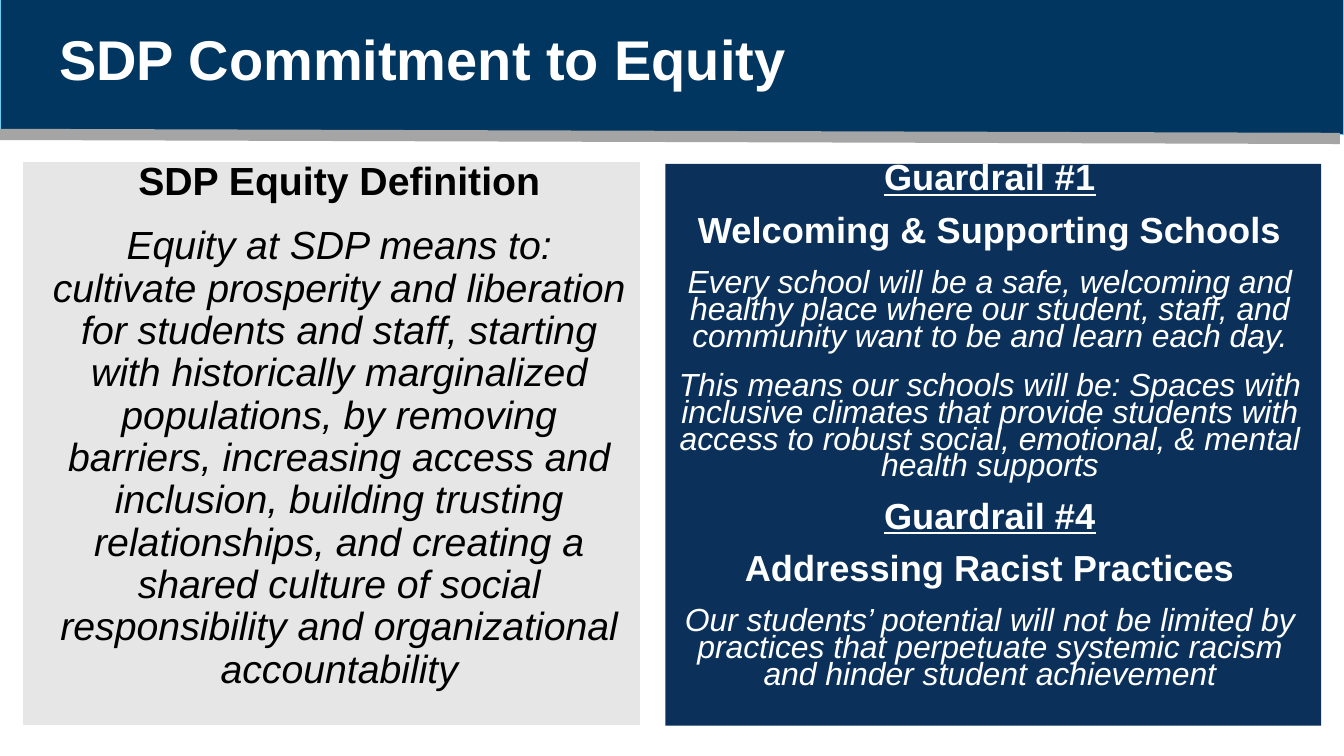
from dataclasses import dataclass
from typing import Optional

import pptx
import pptx.dml.color
import pptx.enum.shapes
import pptx.enum.text
import pptx.oxml.ns
import pptx.util
from lxml import etree

Inches = pptx.util.Inches
Pt = pptx.util.Pt
Align = pptx.enum.text.PP_ALIGN


@dataclass(frozen=True)
class Theme:
    font: str = "Arial"
    white: str = "FFFFFF"
    black: str = "000000"
    band: str = "00365F"
    band_edge: str = "6DCFF6"
    rule: str = "A5A5A5"
    navy: str = "0B315B"
    grey: str = "E6E6E6"
    title: float = 30
    definition: float = 21
    heading: float = 19.4
    detail: float = 17.1


@dataclass(frozen=True)
class Area:
    left: float
    top: float
    width: float
    height: float

    def lengths(self) -> tuple:
        return tuple(map(Inches, (self.left, self.top, self.width, self.height)))


@dataclass(frozen=True)
class Panel:
    area: Area
    fill: str
    edge: Optional[str] = None


@dataclass(frozen=True)
class Guardrail:
    number: str
    name: str
    details: tuple


THEME = Theme()

PANELS = (
    Panel(Area(4.95, 1.22, 4.88, 4.18), THEME.navy),
    Panel(Area(0.18, 1.21, 4.58, 4.18), THEME.grey, THEME.grey),
    Panel(Area(0, -0.05, 10, 1.05), THEME.band, THEME.band_edge),
)

DEFINITION = (
    "Equity at SDP means to: cultivate prosperity and liberation for students and staff, "
    "starting with historically marginalized populations, by removing barriers, increasing "
    "access and inclusion, building trusting relationships, and creating a shared culture of "
    "social responsibility and organizational accountability"
)

GUARDRAILS = (
    Guardrail("Guardrail #1", "Welcoming & Supporting Schools", (
        "Every school will be a safe, welcoming and healthy place where our student, staff, "
        "and community want to be and learn each day.",
        "This means our schools will be: Spaces with inclusive climates that provide students "
        "with access to robust social, emotional, & mental health supports",
    )),
    Guardrail("Guardrail #4", "Addressing Racist Practices", (
        "Our students’ potential will not be limited by practices that perpetuate systemic "
        "racism and hinder student achievement",
    )),
)


def rgb(value: str) -> pptx.dml.color.RGBColor:
    return pptx.dml.color.RGBColor.from_string(value)


def draw_panel(page, panel: Panel) -> None:
    shape = page.shapes.add_shape(
        pptx.enum.shapes.MSO_SHAPE.RECTANGLE, *panel.area.lengths())
    shape.shadow.inherit = False
    shape.fill.solid()
    shape.fill.fore_color.rgb = rgb(panel.fill)
    if panel.edge:
        shape.line.color.rgb = rgb(panel.edge)
        shape.line.width = Pt(0.75)
    else:
        shape.line.fill.background()


def draw_rule(page) -> None:
    rule = page.shapes.add_connector(
        pptx.enum.shapes.MSO_CONNECTOR.STRAIGHT,
        Inches(0), Inches(1), Inches(9.97), Inches(1.03))
    rule.line.color.rgb = rgb(THEME.rule)
    rule.line.width = Pt(6)
    etree.SubElement(rule.element.spPr, pptx.oxml.ns.qn("a:effectLst"))


def prepare_frame(box):
    frame = box.text_frame
    frame.word_wrap = True
    frame.auto_size = pptx.enum.text.MSO_AUTO_SIZE.NONE
    frame.vertical_anchor = pptx.enum.text.MSO_ANCHOR.TOP
    return frame


def add_text(frame, text: str, *, size: float, color: str = THEME.white,
             bold: bool = False, italic: bool = False, underline: bool = False,
             align=Align.CENTER, spacing: float = 0.9) -> None:
    first = not frame.text
    para = frame.paragraphs[0] if first else frame.add_paragraph()
    para.alignment = align
    para.line_spacing = spacing
    para.space_before = Pt(0 if first else 12)
    para.space_after = Pt(0)
    span = para.add_run()
    span.text = text
    span.font.name = THEME.font
    span.font.size = Pt(size)
    span.font.color.rgb = rgb(color)
    span.font.bold = bold
    span.font.italic = italic
    span.font.underline = underline


def draw_title(page) -> None:
    title = page.shapes.title
    title.element.getparent().append(title.element)
    title.left, title.top, title.width, title.height = Area(0.34, 0.19, 9.32, 0.69).lengths()
    add_text(prepare_frame(title), "SDP Commitment to Equity",
             size=THEME.title, bold=True, align=Align.LEFT)


def draw_definition(page) -> None:
    box = page.shapes.add_textbox(*Area(0.29, 1.15, 4.47, 4.18).lengths())
    frame = prepare_frame(box)
    add_text(frame, "SDP Equity Definition",
             size=THEME.definition, color=THEME.black, bold=True)
    add_text(frame, DEFINITION, size=THEME.definition, color=THEME.black, italic=True)


def draw_guardrails(page) -> None:
    box = page.shapes.add_textbox(*Area(4.89, 1.19, 4.95, 4.11).lengths())
    frame = prepare_frame(box)
    for guardrail in GUARDRAILS:
        add_text(frame, guardrail.number, size=THEME.heading,
                 bold=True, underline=True, spacing=0.7)
        add_text(frame, guardrail.name, size=THEME.heading, bold=True, spacing=0.7)
        for detail in guardrail.details:
            add_text(frame, detail, size=THEME.detail, italic=True, spacing=0.7)


def main() -> None:
    deck = pptx.Presentation()
    deck.slide_width = Inches(10)
    deck.slide_height = deck.slide_width * 9 // 16
    page = deck.slides.add_slide(deck.slide_layouts.get_by_name("Title Only"))
    for panel in PANELS:
        draw_panel(page, panel)
    draw_rule(page)
    draw_definition(page)
    draw_title(page)
    draw_guardrails(page)
    deck.save("out.pptx")


if __name__ == "__main__":
    main()
